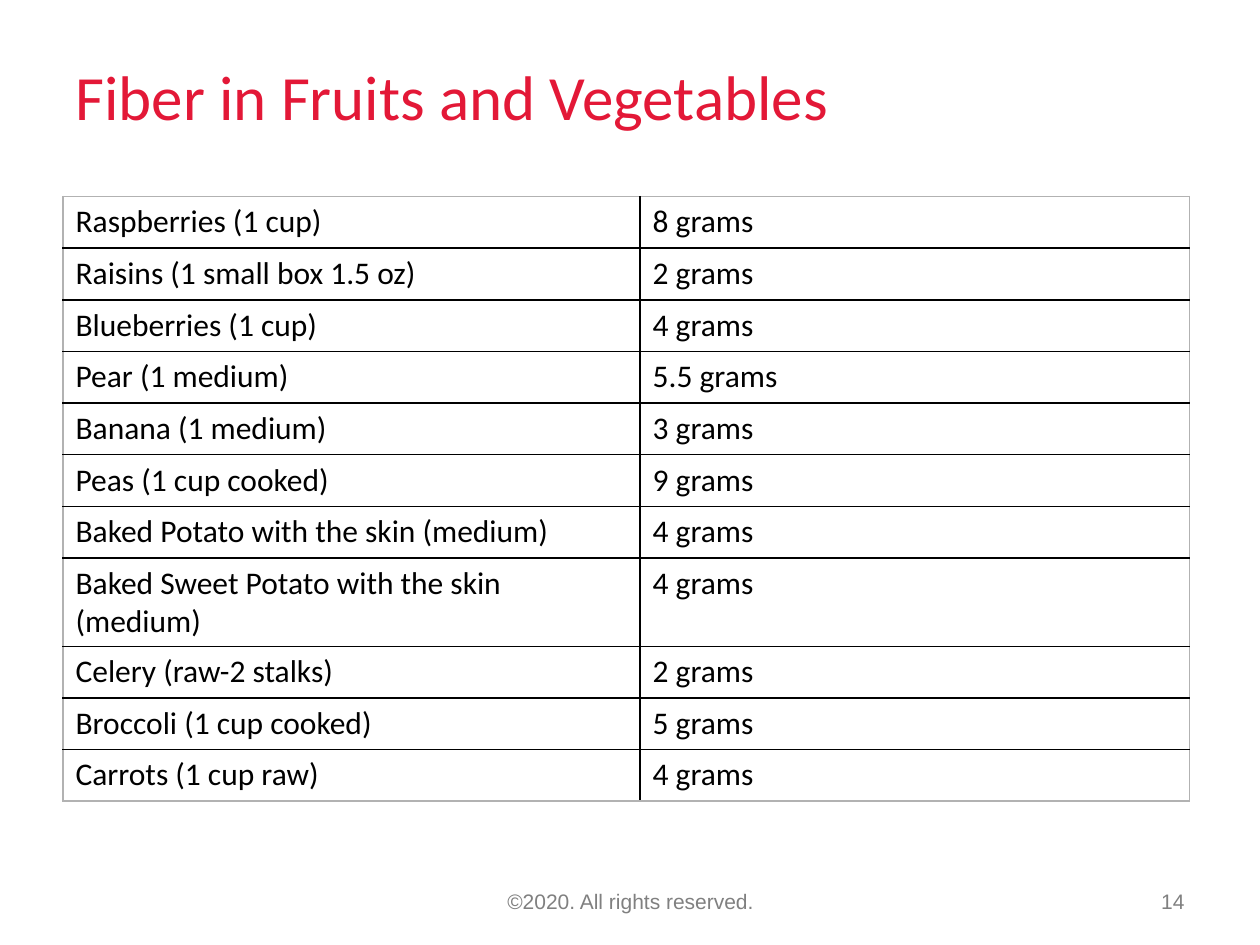
"""Build the slide on fiber in fruits and vegetables."""
from typing import NamedTuple

from lxml.etree import SubElement
from pptx import Presentation
from pptx.dml.color import RGBColor
from pptx.enum.text import MSO_ANCHOR, PP_ALIGN
from pptx.oxml.ns import qn
from pptx.util import Inches, Pt


class Label(NamedTuple):
    text: str
    left: float
    top: float
    width: float
    height: float
    size: int
    font: str
    color: str
    alignment: PP_ALIGN


class Food(NamedTuple):
    name: str
    fiber: str


LABELS = [
    Label("Fiber in Fruits and Vegetables", 0.5, 0.3, 8.28, 0.92, 36, "Calibri", "E31837", PP_ALIGN.LEFT),
    Label("©2020. All rights reserved.", 3.42, 6.95, 3.17, 0.4, 12, "Arial", "808080", PP_ALIGN.CENTER),
    Label("14", 7.17, 6.95, 2.33, 0.4, 12, "Arial", "808080", PP_ALIGN.RIGHT),
]
FOODS = [
    Food("Raspberries (1 cup)", "8 grams"),
    Food("Raisins (1 small box 1.5 oz)", "2 grams"),
    Food("Blueberries (1 cup)", "4 grams"),
    Food("Pear (1 medium)", "5.5 grams"),
    Food("Banana (1 medium)", "3 grams"),
    Food("Peas (1 cup cooked)", "9 grams"),
    Food("Baked Potato with the skin (medium)", "4 grams"),
    Food("Baked Sweet Potato with the skin (medium)", "4 grams"),
    Food("Celery (raw-2 stalks)", "2 grams"),
    Food("Broccoli (1 cup cooked)", "5 grams"),
    Food("Carrots (1 cup raw)", "4 grams"),
]
COLUMN_WIDTHS = (4.58, 4.36)
ROW_HEIGHT = 0.41
INNER_BORDER, OUTER_BORDER = "000000", "B2B2B2"


def style_text(text_frame, size: int, font: str, color: str) -> None:
    for paragraph in text_frame.paragraphs:
        for run in paragraph.runs:
            run.font.size = Pt(size)
            run.font.name = font
            run.font.color.rgb = RGBColor.from_string(color)


def add_label(slide, label: Label) -> None:
    shape = slide.shapes.add_textbox(
        Inches(label.left), Inches(label.top), Inches(label.width), Inches(label.height)
    )
    text_frame = shape.text_frame
    text_frame.word_wrap = True
    text_frame.vertical_anchor = MSO_ANCHOR.MIDDLE
    text_frame.text = label.text
    text_frame.paragraphs[0].alignment = label.alignment
    style_text(text_frame, label.size, label.font, label.color)


def set_borders(cell, outer_sides: dict[str, bool]) -> None:
    properties = cell._tc.get_or_add_tcPr()
    for side, is_outer in outer_sides.items():
        line = SubElement(properties, qn(f"a:ln{side}"), w=str(Pt(1)))
        fill = SubElement(line, qn("a:solidFill"))
        SubElement(fill, qn("a:srgbClr"), val=OUTER_BORDER if is_outer else INNER_BORDER)


def add_food_table(slide, foods: list[Food]) -> None:
    frame = slide.shapes.add_table(
        len(foods), len(COLUMN_WIDTHS), Inches(0.5), Inches(1.56),
        Inches(sum(COLUMN_WIDTHS)), Inches(ROW_HEIGHT * len(foods)),
    )
    table = frame.table
    table.first_row = table.horz_banding = False
    for column, width in zip(table.columns, COLUMN_WIDTHS):
        column.width = Inches(width)
    for row_index, food in enumerate(foods):
        table.rows[row_index].height = Inches(ROW_HEIGHT)
        for column_index, text in enumerate(food):
            cell = table.cell(row_index, column_index)
            cell.text_frame.text = text
            style_text(cell.text_frame, 18, "Calibri", "000000")
            set_borders(cell, {
                "L": column_index == 0,
                "R": column_index == len(COLUMN_WIDTHS) - 1,
                "T": row_index == 0,
                "B": row_index == len(foods) - 1,
            })
            cell.fill.background()


def main() -> None:
    presentation = Presentation()
    presentation.slide_width = Inches(10)
    presentation.slide_height = Inches(7.5)
    slide = presentation.slides.add_slide(presentation.slide_layouts[6])
    for label in LABELS:
        add_label(slide, label)
    add_food_table(slide, FOODS)
    presentation.save("out.pptx")


if __name__ == "__main__":
    main()
